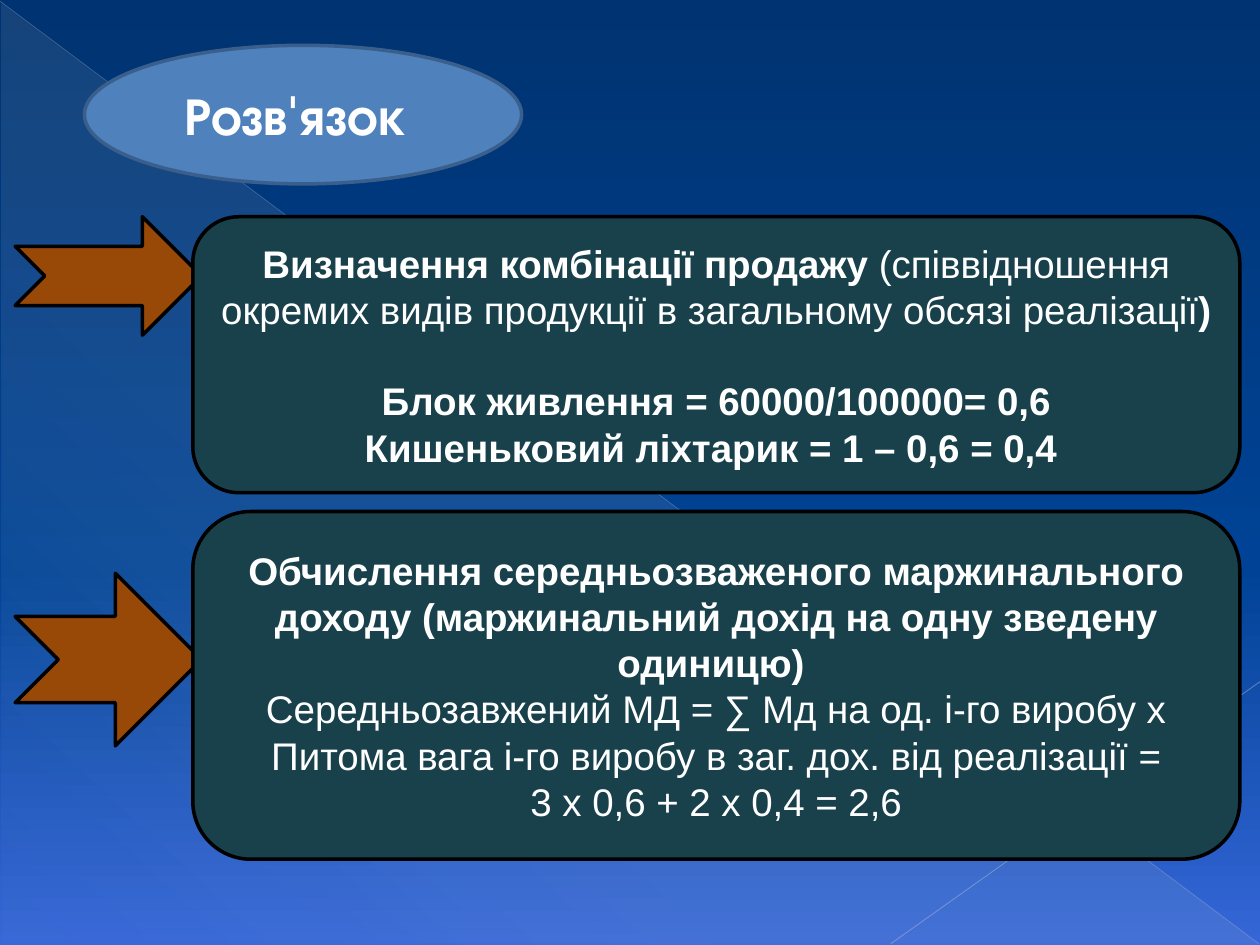
from lxml import etree
from pptx import Presentation
from pptx.dml.color import RGBColor
from pptx.enum import shapes, text
from pptx.oxml.ns import qn
from pptx.util import Inches, Pt

COLORS = {"panel": "18414C", "arrow": "984807", "oval": "4F81BD",
          "oval_line": "3A5F8C", "black": "000000", "white": "FFFFFF",
          "falling_line": "ADB6CE", "rising_line": "B6BED3"}

# (position %, colour, opacity %)
SKY = [(0, "003371", 100), (60, "004396", 100), (100, "3566D7", 100)]
SHEEN = [(0, "EEECE1", 10), (70, "EEECE1", 8), (100, "EEECE1", 1)]

# (from, to, colour, width, opacity %)
RAYS = [((0, 0.01), (9.99, 7.49), "falling_line", 0.39, 35),
        ((10, 5.41), (7.07, 7.49), "rising_line", 0.47, 45)]

TITLE = [(0, [("Розв'язок ", True)])]

# Paragraphs are (space before in points, [(text, bold), ...])
STEPS = [
    {"top": 1.72, "height": 2.19, "arrow_top": 1.72, "arrow_height": 0.94,
     "paragraphs": [
         (0, [("Визначення комбінації продажу ", True),
              ("(співвідношення окремих видів продукції в загальному обсязі реалізації", False),
              (")", True)]),
         (26, [("Блок живлення = 60000/100000= 0,6", True)]),
         (0, [("Кишеньковий ліхтарик = 1 – 0,6 = 0,4 ", True)])]},
    {"top": 4.06, "height": 2.76, "arrow_top": 4.55, "arrow_height": 1.37,
     "paragraphs": [
         (0, [("Обчислення середньозваженого маржинального доходу "
               "(маржинальний дохід на одну зведену одиницю) ", True)]),
         (0, [("Середньозавжений МД = ∑ Мд на од. і-го виробу х Питома вага "
               "і-го виробу в заг. дох. від реалізації =", False)]),
         (0, [("3 х 0,6 + 2 х 0,4 = 2,6", False)])]},
]

ARROW_LEFT, ARROW_WIDTH = 0.12, 1.48
PANEL_LEFT, PANEL_WIDTH = 1.53, 8.31
SHAPE = shapes.MSO_SHAPE


def rgb(name):
    return RGBColor.from_string(COLORS[name])


def set_alpha(color_el, percent):
    etree.SubElement(color_el, qn("a:alpha"), val=str(percent * 1000))


def set_gradient(fill, owner, stops, angle):
    """Fill with any number of stops; the angle runs clockwise."""
    fill.gradient()
    fill.gradient_angle = 360 - angle
    stop_list = next(owner.iter(qn("a:gsLst")))
    for old in list(stop_list):
        stop_list.remove(old)
    for position, color, opacity in stops:
        gs = etree.SubElement(stop_list, qn("a:gs"), pos=str(position * 1000))
        set_alpha(etree.SubElement(gs, qn("a:srgbClr"), val=color), opacity)


def add_solid(s, kind, box, fill, line="black"):
    sp = s.shapes.add_shape(kind, *map(Inches, box))
    sp.shadow.inherit = False
    sp.fill.solid()
    sp.fill.fore_color.rgb = rgb(fill)
    sp.line.color.rgb = rgb(line)
    sp.line.width = Pt(2)
    return sp


def write(sp, paragraphs, font_name, size):
    tf = sp.text_frame
    tf.word_wrap = True
    tf.vertical_anchor = text.MSO_ANCHOR.MIDDLE
    for i, (space, runs) in enumerate(paragraphs):
        p = tf.paragraphs[0] if i == 0 else tf.add_paragraph()
        p.alignment = text.PP_ALIGN.CENTER
        if space:
            p.space_before = Pt(space)
        for content, bold in runs:
            r = p.add_run()
            r.text = content
            for key, value in {"name": font_name, "size": Pt(size), "bold": bold}.items():
                setattr(r.font, key, value)
            r.font.color.rgb = rgb("white")


def add_backdrop(s):
    set_gradient(s.background.fill, s.element, SKY, 90)
    sheen = s.shapes.add_shape(SHAPE.RIGHT_TRIANGLE,
                               *map(Inches, (0.01, 0.02, 9.99, 7.48)))
    sheen.shadow.inherit = False
    sheen.line.fill.background()
    set_gradient(sheen.fill, sheen.element, SHEEN, 133)
    for start, end, color, width, opacity in RAYS:
        ray = s.shapes.add_connector(shapes.MSO_CONNECTOR.STRAIGHT,
                                     *map(Inches, start + end))
        ray.line.color.rgb = rgb(color)
        ray.line.width = Pt(width)
        set_alpha(next(ray.element.iter(qn("a:srgbClr"))), opacity)
        etree.SubElement(ray.element.spPr, qn("a:effectLst"))


def main():
    prs = Presentation()
    prs.slide_width, prs.slide_height = Inches(10), Inches(7.5)
    s = prs.slides.add_slide(prs.slide_layouts[6])
    add_backdrop(s)
    for step in STEPS:
        add_solid(s, SHAPE.NOTCHED_RIGHT_ARROW,
                  (ARROW_LEFT, step["arrow_top"], ARROW_WIDTH, step["arrow_height"]), "arrow")
        panel = add_solid(s, SHAPE.ROUNDED_RECTANGLE,
                          (PANEL_LEFT, step["top"], PANEL_WIDTH, step["height"]), "panel")
        write(panel, step["paragraphs"], "Arial", 22)
    oval = add_solid(s, SHAPE.OVAL, (0.67, 0.36, 3.47, 1.1), "oval", "oval_line")
    write(oval, TITLE, "TeX Gyre Adventor", 30)
    prs.save("out.pptx")


if __name__ == "__main__":
    main()
